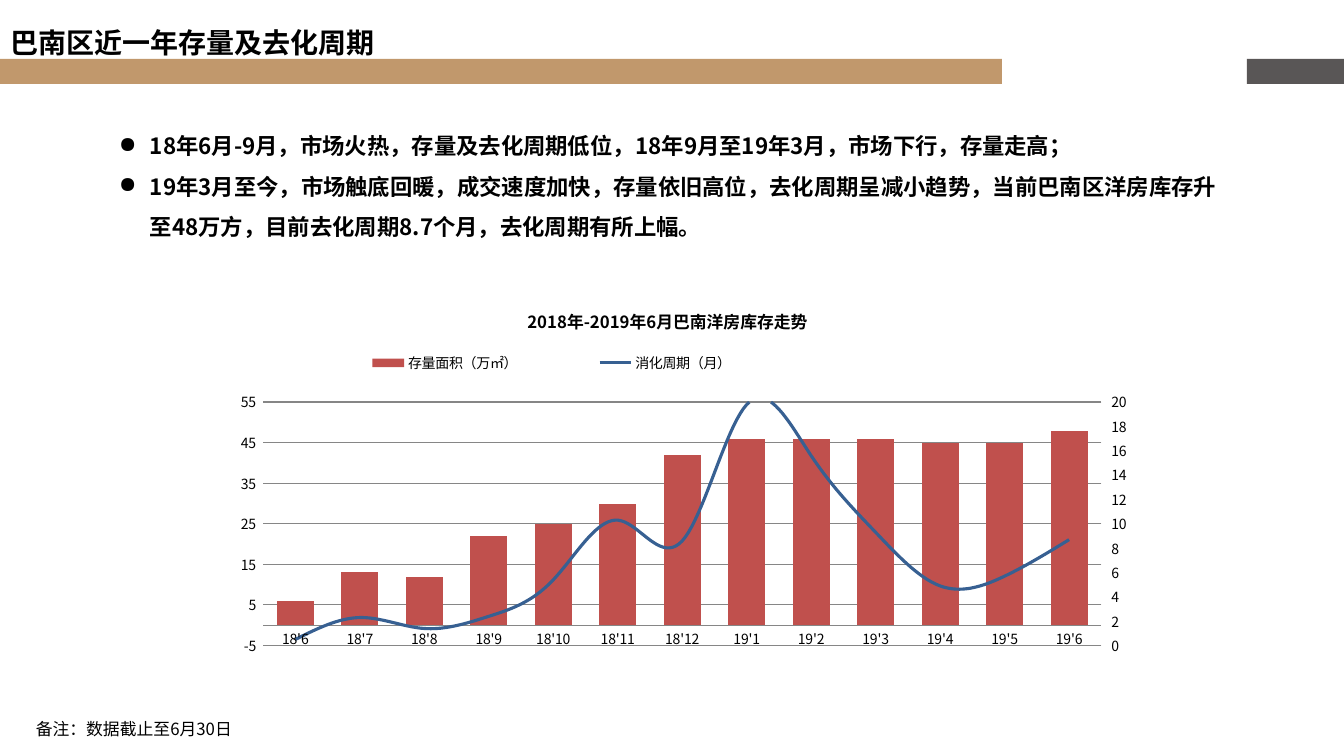
from lxml import etree
from pptx import Presentation
from pptx.chart.data import CategoryChartData
from pptx.dml.color import RGBColor
from pptx.enum.chart import XL_CHART_TYPE, XL_LEGEND_POSITION, XL_MARKER_STYLE, XL_TICK_MARK
from pptx.enum.shapes import MSO_SHAPE
from pptx.enum.text import MSO_ANCHOR, PP_ALIGN
from pptx.oxml import parse_xml
from pptx.oxml.ns import qn
from pptx.util import Pt

COLUMN = XL_CHART_TYPE.COLUMN_CLUSTERED
TOP_SIDE = XL_LEGEND_POSITION.TOP
NO_MARK = XL_MARKER_STYLE.NONE
NO_TICK = XL_TICK_MARK.NONE
RECT = MSO_SHAPE.RECTANGLE
TOP, MIDDLE = MSO_ANCHOR.TOP, MSO_ANCHOR.MIDDLE
LEFT = PP_ALIGN.LEFT

FACE = "Noto Sans CJK SC"
BLACK, GRAY, RED, BLUE = "000000", "868686", "C0504D", "376092"
CHART_NS = ('xmlns:c="http://schemas.openxmlformats.org/drawingml/2006/chart" '
            'xmlns:a="http://schemas.openxmlformats.org/drawingml/2006/main"')

MONTHS = ["18'6", "18'7", "18'8", "18'9", "18'10", "18'11", "18'12",
          "19'1", "19'2", "19'3", "19'4", "19'5", "19'6"]
STOCK = [6, 13, 12, 22, 25, 30, 42, 46, 46, 46, 45, 45, 48]
CYCLE = [0.5, 2.3, 1.4, 2.4, 5.4, 10.3, 8.6, 19.8, 15.6, 9.3, 4.9, 5.7, 8.7]
POINTS = [
    "18年6月-9月，市场火热，存量及去化周期低位，18年9月至19年3月，市场下行，存量走高；",
    "19年3月至今，市场触底回暖，成交速度加快，存量依旧高位，去化周期呈减小趋势，"
    "当前巴南区洋房库存升至48万方，目前去化周期8.7个月，去化周期有所上幅。",
]


def px(num):
    return round(num * 914400 / 100.8)


def color(code):
    return RGBColor.from_string(code)


def style(font, size, bold=False):
    font.size = Pt(size)
    font.bold = bold
    font.color.rgb = color(BLACK)
    font.name = FACE
    etree.SubElement(font._element, qn("a:ea"), typeface=FACE)


def write(para, text, size, bold=False):
    run = para.add_run()
    run.text = text
    style(run.font, size, bold)


def stroke(line, code, width):
    line.color.rgb = color(code)
    line.width = Pt(width)


def place(shape, box):
    shape.left, shape.top, shape.width, shape.height = map(px, box)


def add_bar(slide, box, code):
    bar = slide.shapes.add_shape(RECT, *map(px, box))
    bar.shadow.inherit = False
    bar.fill.solid()
    bar.fill.fore_color.rgb = color(code)
    bar.line.fill.background()


def add_head(slide, box):
    x, y, w, h = box
    add_bar(slide, (x, y + 39, 1002, 25), "C1986C")
    add_bar(slide, (x + w - 97, y + 39, 97, 25), "595656")
    title = slide.shapes.title
    place(title, (x, y, w // 2, h))
    frame = title.text_frame
    frame.vertical_anchor = TOP
    para = frame.paragraphs[0]
    para.alignment = LEFT
    write(para, "巴南区近一年存量及去化周期", 20, True)


def add_text(slide, box, anchor):
    frame = slide.shapes.add_textbox(*map(px, box)).text_frame
    frame.word_wrap = True
    frame.vertical_anchor = anchor
    return frame


def add_points(slide, box):
    frame = add_text(slide, box, TOP)
    for pos, text in enumerate(POINTS):
        para = frame.add_paragraph() if pos else frame.paragraphs[0]
        props = para._p.get_or_add_pPr()
        props.set("marL", str(px(31)))
        props.set("indent", str(-px(31)))
        etree.SubElement(props, qn("a:buChar"), char="●")
        para.line_spacing = 1.5
        write(para, text, 16, True)


def add_note(slide, box):
    frame = add_text(slide, box, MIDDLE)
    write(frame.paragraphs[0], "备注：数据截止至6月30日", 12)


def layout(x, y, w=None, h=None, inner=False):
    target = '<c:layoutTarget val="inner"/>' if inner else ""
    size = f'<c:w val="{w}"/><c:h val="{h}"/>' if w else ""
    return parse_xml(
        f'<c:layout {CHART_NS}><c:manualLayout>{target}<c:xMode val="edge"/>'
        f'<c:yMode val="edge"/><c:x val="{x}"/><c:y val="{y}"/>{size}'
        '</c:manualLayout></c:layout>')


def set_layout(node, new, after=None):
    for old in node.findall(qn("c:layout")):
        node.remove(old)
    if after is None:
        node.insert(0, new)
    else:
        after.addnext(new)


def add_line(plot):
    bars = plot.find(qn("c:barChart"))
    item = bars.findall(qn("c:ser"))[1]
    flip = item.find(qn("c:invertIfNegative"))
    if flip is not None:
        item.remove(flip)
    lines = parse_xml(
        f'<c:lineChart {CHART_NS}><c:grouping val="standard"/><c:varyColors val="0"/>'
        '<c:marker val="1"/><c:axId val="501"/><c:axId val="502"/></c:lineChart>')
    lines.insert(2, item)
    bars.addnext(lines)
    months = parse_xml(
        f'<c:catAx {CHART_NS}><c:axId val="501"/>'
        '<c:scaling><c:orientation val="minMax"/></c:scaling><c:delete val="0"/>'
        '<c:axPos val="t"/><c:majorTickMark val="none"/><c:minorTickMark val="none"/>'
        f'<c:tickLblPos val="none"/><c:spPr><a:ln w="{Pt(1.5)}"><a:solidFill>'
        f'<a:srgbClr val="{GRAY}"/></a:solidFill></a:ln></c:spPr>'
        '<c:crossAx val="502"/><c:crosses val="max"/></c:catAx>')
    cycle = parse_xml(
        f'<c:valAx {CHART_NS}><c:axId val="502"/><c:scaling><c:orientation val="minMax"/>'
        '<c:max val="20"/><c:min val="0"/></c:scaling><c:delete val="0"/>'
        '<c:axPos val="r"/><c:numFmt formatCode="0;[Red]0" sourceLinked="0"/>'
        '<c:majorTickMark val="out"/><c:minorTickMark val="none"/>'
        '<c:tickLblPos val="nextTo"/><c:spPr><a:ln><a:noFill/></a:ln></c:spPr>'
        '<c:crossAx val="501"/><c:crosses val="max"/><c:crossBetween val="between"/>'
        '<c:majorUnit val="2"/></c:valAx>')
    last = plot.findall(qn("c:valAx"))[-1]
    last.addnext(months)
    months.addnext(cycle)


def set_axes(chart):
    months, stock = chart.category_axis, chart.value_axis
    months.major_tick_mark = stock.major_tick_mark = NO_TICK
    months.has_major_gridlines = False
    stroke(months.format.line, GRAY, 0.75)
    stock.minimum_scale, stock.maximum_scale, stock.major_unit = -5, 55, 10
    stock.tick_labels.number_format = "0_ "
    stock.tick_labels.number_format_is_linked = False
    stock.format.line.fill.background()
    stroke(stock.major_gridlines.format.line, GRAY, 0.75)


def add_graph(slide, box):
    data = CategoryChartData()
    data.categories = MONTHS
    data.add_series("存量面积（万㎡）", STOCK)
    data.add_series("消化周期（月）", CYCLE)
    chart = slide.shapes.add_chart(COLUMN, *map(px, box), data).chart
    style(chart.font, 10)
    set_axes(chart)
    area = chart._chartSpace.chart.plotArea
    add_line(area)
    set_layout(area, layout(0.141, 0.273, 0.767, 0.577, True))

    bars, lines = chart.plots
    bars.gap_width, bars.overlap = 75, -25
    bars.vary_by_categories = False
    fill = bars.series[0].format.fill
    fill.solid()
    fill.fore_color.rgb = color(RED)
    cycle = lines.series[0]
    stroke(cycle.format.line, BLUE, 2.25)
    cycle.marker.style = NO_MARK
    cycle.smooth = True

    chart.has_title = True
    title = chart.chart_title
    write(title.text_frame.paragraphs[0], "2018年-2019年6月巴南洋房库存走势", 12, True)
    node = title._element
    set_layout(node, layout(0.38, 0.04), node.find(qn("c:tx")))
    chart.has_legend = True
    key = chart.legend
    key.position = TOP_SIDE
    key.include_in_layout = False
    node = key._element
    set_layout(node, layout(0.17, 0.14, 0.47, 0.08), node.find(qn("c:legendPos")))


def main():
    deck = Presentation()
    deck.slide_width, deck.slide_height = px(1344), px(756)
    slide = deck.slides.add_slide(deck.slide_layouts[5])
    add_head(slide, (0, 20, 1344, 44))
    add_graph(slide, (109, 287, 1093, 422))
    add_points(slide, (109, 114, 1130, 132))
    add_note(slide, (26, 701, 294, 55))
    deck.save("out.pptx")


if __name__ == "__main__":
    main()
